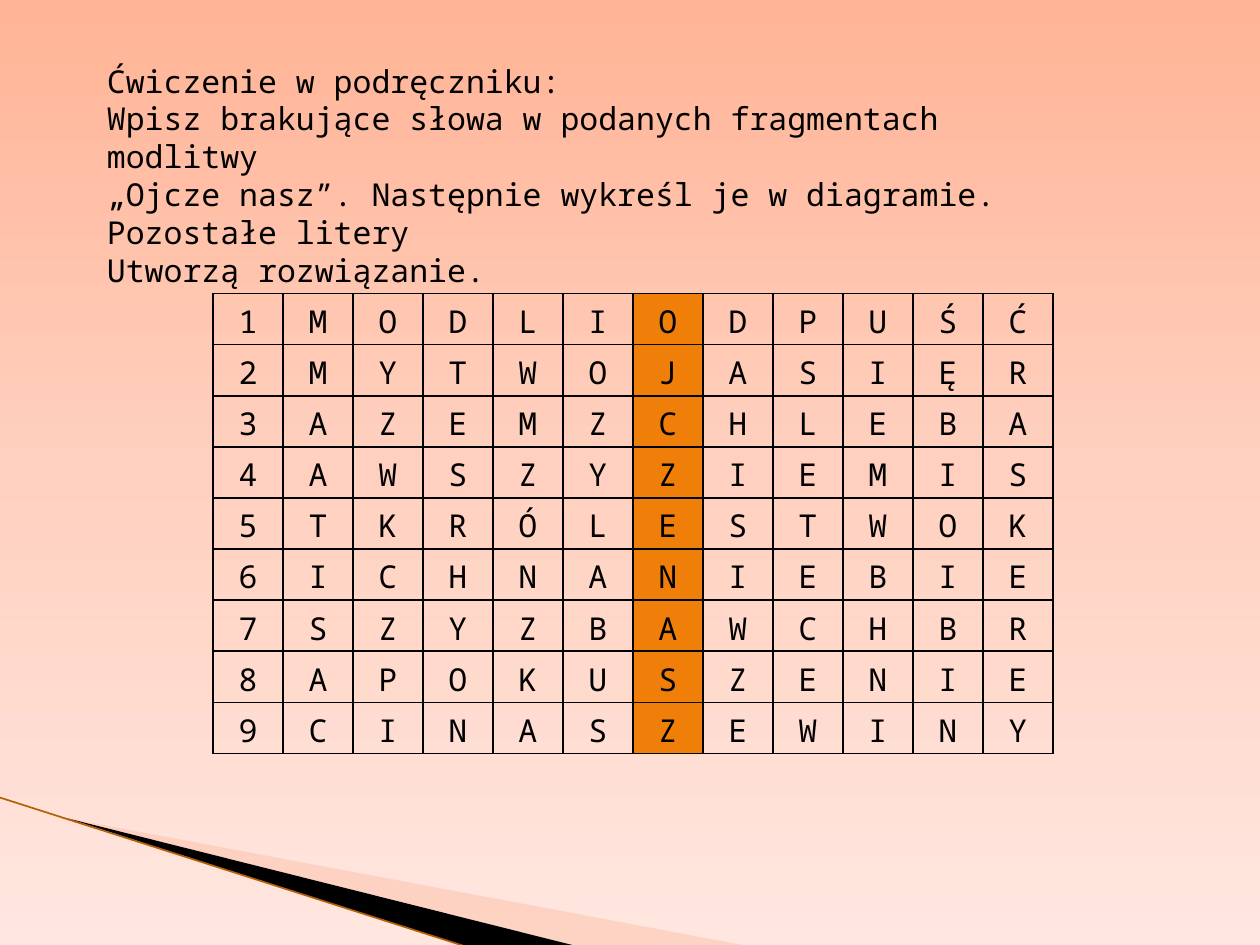
from copy import deepcopy

from lxml import etree
from pptx import Presentation
from pptx.dml.color import RGBColor
from pptx.enum.shapes import MSO_CONNECTOR
from pptx.enum.text import MSO_ANCHOR, PP_ALIGN
from pptx.oxml.ns import qn
from pptx.util import Inches, Pt

STRAIGHT = MSO_CONNECTOR.STRAIGHT
CENTER, LEFT = PP_ALIGN.CENTER, PP_ALIGN.LEFT
MIDDLE = MSO_ANCHOR.MIDDLE

BLACK = RGBColor(0x00, 0x00, 0x00)
ORANGE = RGBColor(0xF0, 0x7F, 0x09)
PEACH = RGBColor(0xFC, 0xB7, 0x9B)
EDGE = RGBColor(0xB4, 0x5F, 0x06)
SKY = (RGBColor(0xFF, 0xB4, 0x96), RGBColor(0xFF, 0xD0, 0xBF), RGBColor(0xFF, 0xE7, 0xE0))

FONT = "Noto Sans Mono"
INSTRUCTIONS = (
    "Ćwiczenie w podręczniku:",
    "Wpisz brakujące słowa w podanych fragmentach modlitwy",
    "„Ojcze nasz”. Następnie wykreśl je w diagramie. Pozostałe litery",
    "Utworzą rozwiązanie.",
)
LETTERS = (
    "MODLIODPUŚĆ",
    "MYTWOJASIĘR",
    "AZEMZCHLEBA",
    "AWSZYZIEMIS",
    "TKRÓLESTWOK",
    "ICHNANIEBIE",
    "SZYZBAWCHBR",
    "APOKUSZENIE",
    "CINASZEWINY",
)
SOLUTION_COLUMN = 6


def write(para, text, size=18, color=BLACK, align=LEFT):
    para.alignment = align
    span = para.add_run()
    span.text = text
    span.font.name = FONT
    span.font.size = Pt(size)
    span.font.color.rgb = color


def paint_background(page):
    fill = page.background.fill
    fill.gradient()
    fill.gradient_angle = 270
    first = fill._fill._gradFill.find(qn("a:gsLst"))[0]
    first.addnext(deepcopy(first))
    for stop, color, position in zip(fill.gradient_stops, SKY, (0, 0.5, 1)):
        stop.color.rgb = color
        stop.position = position


def add_wedge(page, points, color, alpha=None):
    builder = page.shapes.build_freeform(*points[0])
    builder.add_line_segments(points[1:], close=True)
    wedge = builder.convert_to_shape()
    wedge.shadow.inherit = False
    wedge.fill.solid()
    wedge.fill.fore_color.rgb = color
    wedge.line.fill.background()
    if alpha:
        tint = wedge._element.spPr.find(".//" + qn("a:srgbClr"))
        etree.SubElement(tint, qn("a:alpha"), val=str(alpha * 1000))


def add_corner(page, left, top, width, height):
    def at(across, down):
        return Inches(left + across * width), Inches(top + down * height)

    tip, start, end = at(0.09, 0.14), at(0, 0), at(0.62, 1)
    middle, right = at(0.77, 1), at(1, 1)
    add_wedge(page, [tip, right, middle], PEACH, alpha=40)
    add_wedge(page, [tip, middle, end], BLACK)
    edge = page.shapes.add_connector(STRAIGHT, *start, *end)
    edge.line.color.rgb = EDGE
    edge.line.width = Pt(0.95)
    etree.SubElement(edge._element.spPr, qn("a:effectLst"))


def add_instructions(page, left, top, width, height):
    box = page.shapes.add_textbox(*map(Inches, (left, top, width, height)))
    frame = box.text_frame
    frame.word_wrap = True
    for index, text in enumerate(INSTRUCTIONS):
        para = frame.add_paragraph() if index else frame.paragraphs[0]
        write(para, text)


def outline(cell):
    properties = cell._tc.get_or_add_tcPr()
    for position, side in enumerate(("a:lnL", "a:lnR", "a:lnT", "a:lnB")):
        border = etree.Element(qn(side), w=str(Pt(1)))
        paint = etree.SubElement(border, qn("a:solidFill"))
        etree.SubElement(paint, qn("a:srgbClr"), val=str(BLACK))
        properties.insert(position, border)


def add_letter_grid(page, left, top, width, height):
    rows, columns = len(LETTERS), len(LETTERS[0]) + 1
    table = page.shapes.add_table(
        rows, columns, *map(Inches, (left, top, width, height))
    ).table
    table.first_row = table.horz_banding = False
    for row, word in enumerate(LETTERS):
        for column, letter in enumerate(str(row + 1) + word):
            cell = table.cell(row, column)
            cell.vertical_anchor = MIDDLE
            write(cell.text_frame.paragraphs[0], letter, align=CENTER)
            if column == SOLUTION_COLUMN:
                cell.fill.solid()
                cell.fill.fore_color.rgb = ORANGE
            else:
                cell.fill.background()
            outline(cell)


def main():
    deck = Presentation()
    deck.slide_width, deck.slide_height = Inches(10), Inches(7.5)
    page = deck.slides.add_slide(deck.slide_layouts[6])
    paint_background(page)
    add_corner(page, 0, 6.33, 5.95, 1.18)
    add_instructions(page, 0.75, 0.44, 8.02, 1.31)
    add_letter_grid(page, 1.69, 2.33, 6.67, 3.65)
    deck.save("out.pptx")


if __name__ == "__main__":
    main()
